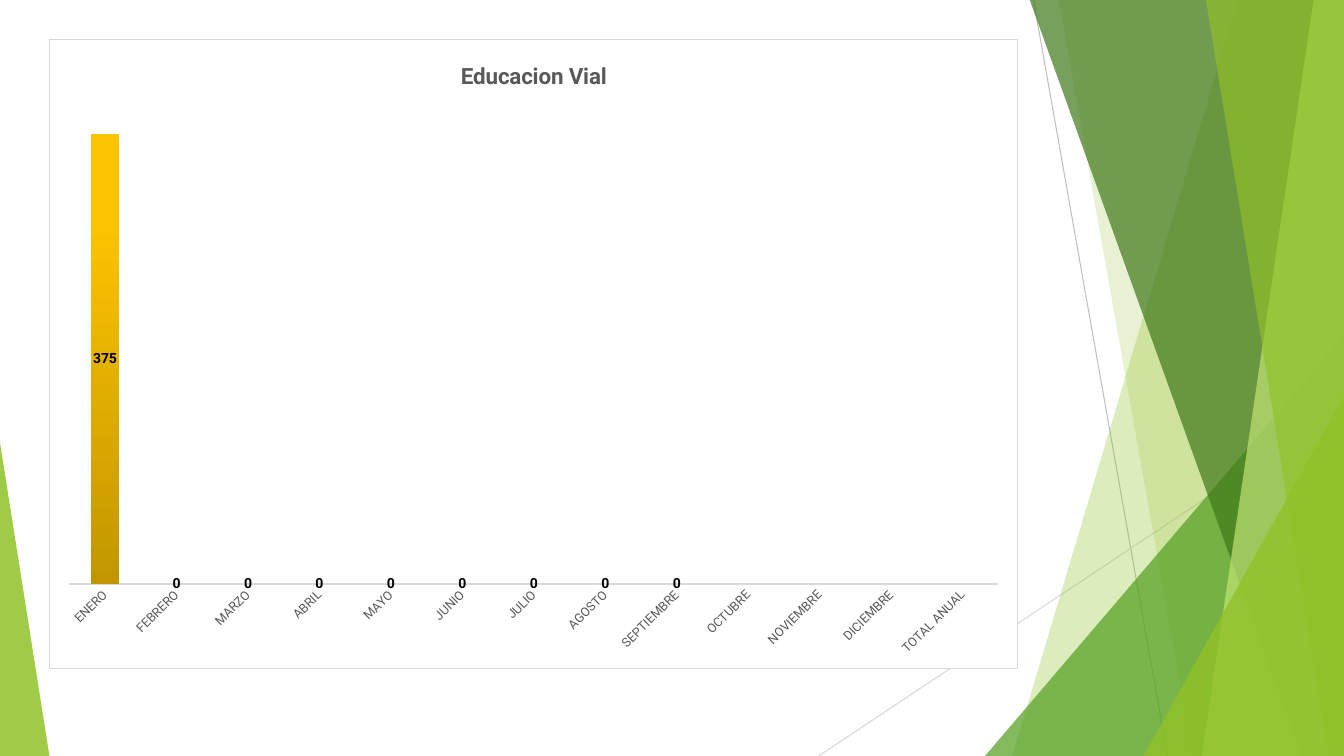
from lxml import etree
from pptx import Presentation
from pptx.chart.data import CategoryChartData
from pptx.dml.color import RGBColor
from pptx.enum.chart import XL_CHART_TYPE as ChartType
from pptx.enum.chart import XL_LABEL_POSITION as LabelPosition
from pptx.enum.chart import XL_TICK_MARK as TickMark
from pptx.enum.shapes import MSO_CONNECTOR as Connector
from pptx.enum.shapes import MSO_SHAPE as Shape
from pptx.oxml import parse_xml
from pptx.oxml.ns import nsdecls, qn
from pptx.util import Inches, Pt


def rgb(color):
    return RGBColor.from_string(color)


def paint(shape, color, opacity):
    """Fill a shape with a see-through colour, without line or shadow."""
    shape.shadow.inherit = False
    shape.line.fill.background()
    shape.fill.solid()
    shape.fill.fore_color.rgb = rgb(color)
    tint = shape.fill._xPr.find(".//" + qn("a:srgbClr"))
    etree.SubElement(tint, qn("a:alpha")).set("val", str(opacity * 1000))


WIDTH, HEIGHT, TOP = 13.33, 7.5, -0.01

deck = Presentation()
deck.slide_width, deck.slide_height = Inches(WIDTH), Inches(HEIGHT)
page = deck.slides.add_slide(deck.slide_layouts[6])

# Thin lines behind the facets
for x1, y1, x2, y2, color in [
    (10.25, 0, 11.58, HEIGHT, "BFBFBF"),
    (WIDTH, 4.03, 8.12, HEIGHT, "D9D9D9"),
]:
    line = page.shapes.add_connector(
        Connector.STRAIGHT, Inches(x1), Inches(y1), Inches(x2), Inches(y2))
    line.line.color.rgb = rgb(color)
    line.line.width = Pt(0.75)
    etree.SubElement(line._element.spPr, qn("a:effectLst"))

# Facets: a band gives its top and bottom left corners and runs to the right
# edge; a triangle gives its left, top, width and apex, and stands on the bottom
for kind, measures, color, opacity in [
    ("band", (12.28, 10.04), "90C226", 30),
    ("band", (10.5, 11.83), "90C226", 20),
    ("triangle", (9.77, 3.33, 3.56, 1), "54A021", 72),
    ("band", (10.21, 12.91), "3F7819", 70),
    ("band", (13.03, 11.92), "C0E474", 70),
    ("band", (11.96, 13.18), "90C226", 65),
    ("triangle", (11.34, 3.93, 1.99, 1), "90C226", 80),
    ("triangle", (0, 4.39, 0.49, 0), "90C226", 85),
]:
    if kind == "band":
        upper, lower = measures
        outline = page.shapes.build_freeform(Inches(upper), Inches(TOP))
        corners = [(WIDTH, TOP), (WIDTH, HEIGHT), (lower, HEIGHT)]
        outline.add_line_segments([(Inches(x), Inches(y)) for x, y in corners])
        facet = outline.convert_to_shape()
    else:
        left, top, width, apex = measures
        facet = page.shapes.add_shape(
            Shape.ISOSCELES_TRIANGLE, Inches(left), Inches(top),
            Inches(width), Inches(HEIGHT - top))
        facet.adjustments[0] = apex
    paint(facet, color, opacity)

# Chart
data = CategoryChartData()
data.categories = [
    "ENERO", "FEBRERO", "MARZO", "ABRIL", "MAYO", "JUNIO", "JULIO", "AGOSTO",
    "SEPTIEMBRE", "OCTUBRE", "NOVIEMBRE", "DICIEMBRE", "TOTAL ANUAL"]
data.add_series("Series 1", [375] + [0] * 8 + [None] * 4)
chart = page.shapes.add_chart(
    ChartType.COLUMN_STACKED, Inches(0.49), Inches(0.39),
    Inches(9.61), Inches(6.25), data).chart
chart.has_legend = False
chart.has_title = True
chart.title_format = None
title = chart.chart_title.text_frame
title.text = "Educacion Vial"

months, values = chart.category_axis, chart.value_axis
months.major_tick_mark = TickMark.NONE
months.format.line.color.rgb = rgb("D9D9D9")
months.format.line.width = Pt(1)
values.visible = False
values.has_major_gridlines = False
values.minimum_scale, values.maximum_scale = 0, 375

plot = chart.plots[0]
plot.gap_width, plot.overlap = 150, 100
plot.vary_by_categories = False
series = plot.series[0]
labels = series.data_labels
labels.show_value = True
labels.position = LabelPosition.CENTER

for font, size, bold, color in [
    (chart.font, 10, False, "000000"),
    (title.paragraphs[0].runs[0].font, 16, True, "595959"),
    (months.tick_labels.font, 9, False, "595959"),
    (labels.font, 10, True, "000000"),
]:
    for name, value in {"name": "Roboto", "size": Pt(size), "bold": bold}.items():
        setattr(font, name, value)
    font.color.rgb = rgb(color)

# Slanted month names, column gradient, plot place and chart frame
space = chart.element
space.xpath(".//c:catAx/c:txPr/a:bodyPr")[0].set("rot", "-2700000")

series.format.fill.gradient()
gradient = space.xpath(".//c:ser/c:spPr/a:gradFill")[0]
stops = "".join(
    f'<a:gs pos="{place * 1000}"><a:srgbClr val="{color}"/></a:gs>'
    for place, color in [(0, "C29600"), (80, "FCC300"), (100, "FDC400")])
gradient.getparent().replace(gradient, parse_xml(
    f'<a:gradFill {nsdecls("a")}><a:gsLst>{stops}</a:gsLst>'
    '<a:lin ang="16200000" scaled="0"/></a:gradFill>'))

area = space.xpath(".//c:plotArea")[0]
for old in area.findall(qn("c:layout")):
    area.remove(old)
places = "".join(
    f'<c:{name} val="{value}"/>' for name, value in {
        "layoutTarget": "inner", "xMode": "edge", "yMode": "edge",
        "x": 0.02, "y": 0.15, "w": 0.96, "h": 0.715}.items())
area.insert(0, parse_xml(
    f'<c:layout {nsdecls("c")}><c:manualLayout>{places}</c:manualLayout></c:layout>'))

space.find(qn("c:chart")).addnext(parse_xml(
    f'<c:spPr {nsdecls("c", "a")}>'
    '<a:solidFill><a:srgbClr val="FFFFFF"/></a:solidFill>'
    f'<a:ln w="{Pt(0.75)}"><a:solidFill><a:srgbClr val="D9D9D9"/></a:solidFill></a:ln>'
    '</c:spPr>'))

deck.save("out.pptx")
